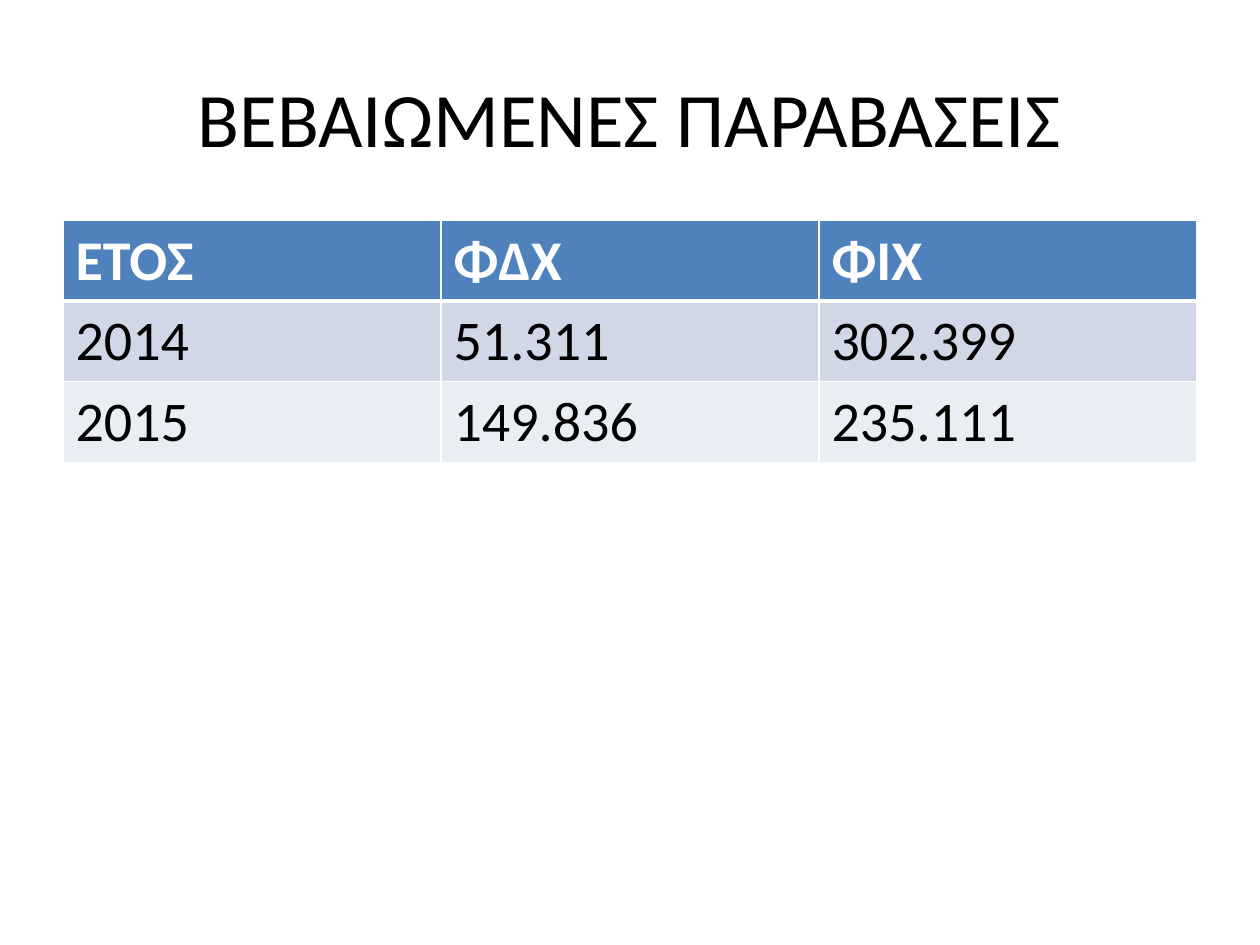
from lxml.etree import SubElement
from pptx import Presentation
from pptx.dml.color import RGBColor
from pptx.enum.text import MSO_ANCHOR as Anchor, PP_ALIGN as Align
from pptx.oxml.ns import qn
from pptx.util import Inches, Pt

WIDTH, HEIGHT = Inches(10), Inches(7.5)
MARGIN = 0.05
ROW_HEIGHT = Inches(0.64)
WHITE, BLACK = "FFFFFF", "000000"
HEADER_FILL, BAND_FILLS = "4F81BD", ("D0D8E8", "E9EDF4")
VIOLATIONS = [
    ("ΕΤΟΣ", "ΦΔΧ", "ΦΙΧ"),
    ("2014", "51.311", "302.399"),
    ("2015", "149.836", "235.111"),
]


def color(value):
    """Turn a hex string into a colour."""
    return RGBColor.from_string(value)


def write(frame, text, size, ink=BLACK, bold=False, align=Align.LEFT):
    """Write one formatted paragraph into a text frame."""
    para = frame.paragraphs[0]
    para.alignment = align
    span = para.add_run()
    span.text = text
    span.font.name = "Calibri"
    span.font.size = Pt(size)
    span.font.bold = bold
    span.font.color.rgb = color(ink)


def add_title(page, text):
    """Add the centred title across the top of the page."""
    box = page.shapes.add_textbox(
        int(WIDTH * MARGIN), int(HEIGHT * 0.04),
        int(WIDTH * (1 - 2 * MARGIN)), int(HEIGHT / 6))
    box.text_frame.word_wrap = True
    box.text_frame.vertical_anchor = Anchor.MIDDLE
    write(box.text_frame, text, 44, align=Align.CENTER)


def set_borders(cell, top=1, bottom=1):
    """Draw white borders around a cell, with widths in points."""
    props = cell._tc.get_or_add_tcPr()
    for side, width in (("L", 1), ("R", 1), ("T", top), ("B", bottom)):
        line = SubElement(props, qn(f"a:ln{side}"), w=str(Pt(width)))
        fill = SubElement(line, qn("a:solidFill"))
        SubElement(fill, qn("a:srgbClr"), val=WHITE)


def add_table(page, rows):
    """Add a table with a bold header row and banded body rows."""
    table = page.shapes.add_table(
        len(rows), len(rows[0]), int(WIDTH * MARGIN), Inches(1.75),
        int(WIDTH * (1 - 2 * MARGIN)), ROW_HEIGHT * len(rows)).table
    for r, values in enumerate(rows):
        header = r == 0
        fill = HEADER_FILL if header else BAND_FILLS[(r - 1) % 2]
        for c, value in enumerate(values):
            cell = table.cell(r, c)
            set_borders(cell, top=3 if r == 1 else 1, bottom=3 if header else 1)
            cell.fill.solid()
            cell.fill.fore_color.rgb = color(fill)
            write(cell.text_frame, value, 32,
                  ink=WHITE if header else BLACK, bold=header)


def main():
    """Build the slide and save the deck."""
    deck = Presentation()
    deck.slide_width, deck.slide_height = WIDTH, HEIGHT
    page = deck.slides.add_slide(deck.slide_layouts[6])
    add_title(page, "ΒΕΒΑΙΩΜΕΝΕΣ ΠΑΡΑΒΑΣΕΙΣ")
    add_table(page, VIOLATIONS)
    deck.save("out.pptx")


if __name__ == "__main__":
    main()
